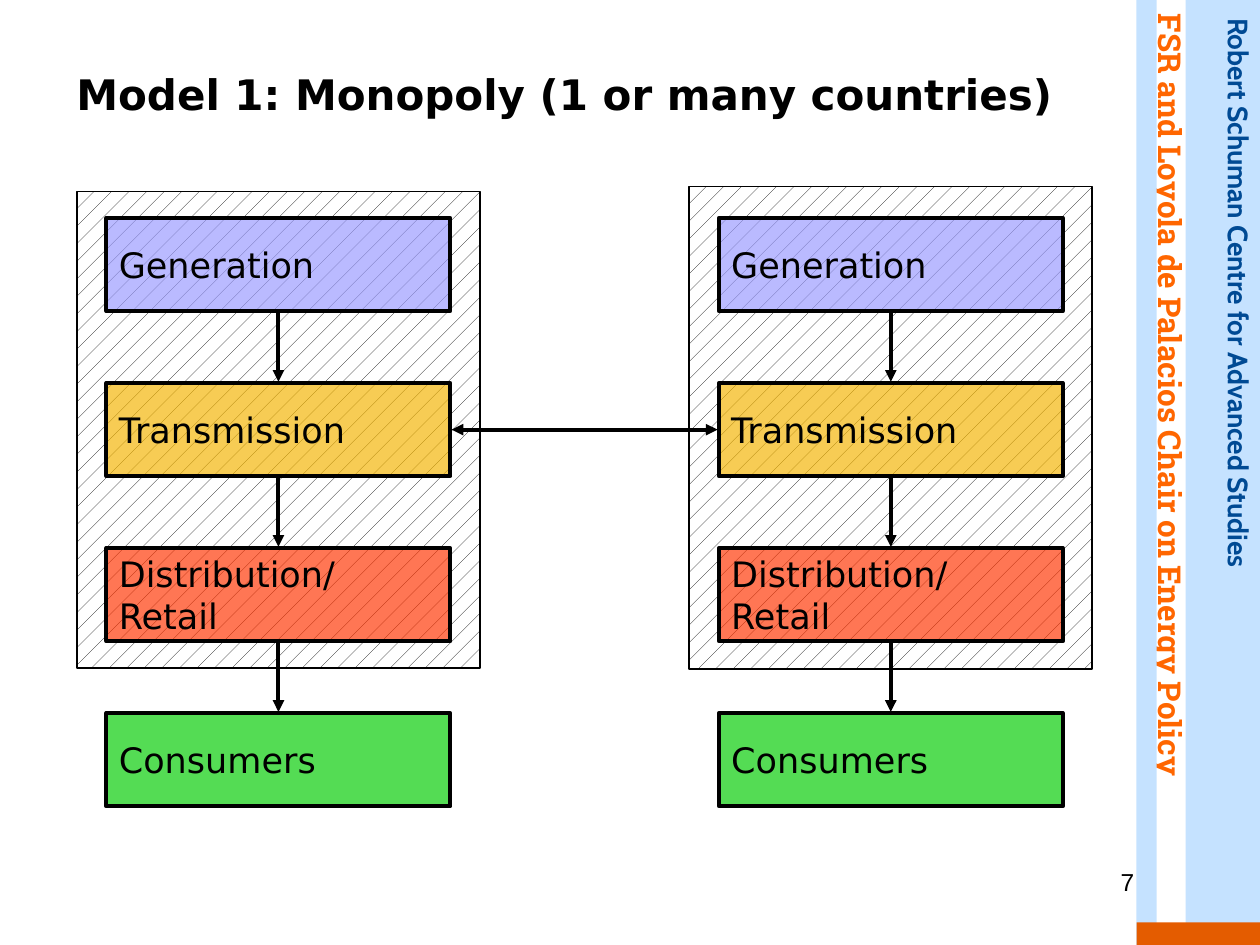
from lxml import etree
from pptx import Presentation
from pptx.dml.color import RGBColor
from pptx.enum.dml import MSO_PATTERN
from pptx.enum.shapes import MSO_CONNECTOR, MSO_SHAPE
from pptx.enum.text import MSO_ANCHOR, PP_ALIGN
from pptx.oxml.ns import qn
from pptx.util import Inches, Pt

RECTANGLE = MSO_SHAPE.RECTANGLE
STRAIGHT = MSO_CONNECTOR.STRAIGHT
HATCH = MSO_PATTERN.PERCENT_5
MIDDLE, TOP = MSO_ANCHOR.MIDDLE, MSO_ANCHOR.TOP
LEFT, CENTER, RIGHT = PP_ALIGN.LEFT, PP_ALIGN.CENTER, PP_ALIGN.RIGHT

BODY_FONT = "DejaVu Sans"
STAGES = [
    ("Generation", "9999FF"),
    ("Transmission", "F4B400"),
    ("Distribution/\nRetail", "FF3300"),
    ("Consumers", "00CC00"),
]
STAGE_TOP, STAGE_PITCH = Inches(1.73), Inches(1.31)
STAGE_WIDTH, STAGE_HEIGHT = Inches(2.73), Inches(0.74)
ARROW_GAP = Inches(0.01)


def rgb(value):
    return RGBColor.from_string(value)


def write(shape, text, size, font, color="000000", bold=False, align=LEFT, anchor=TOP):
    frame = shape.text_frame
    frame.word_wrap = True
    frame.vertical_anchor = anchor
    paragraph = frame.paragraphs[0]
    paragraph.alignment = align
    for index, line in enumerate(text.split("\n")):
        if index:
            paragraph.add_line_break()
        run = paragraph.add_run()
        run.text = line
        run.font.size = Pt(size)
        run.font.name = font
        run.font.bold = bold
        run.font.color.rgb = rgb(color)


def add_box(slide, box, fill=None, line_width=None, opacity=None):
    """Rectangle with a solid fill, or a hatched one when no fill is given."""
    rectangle = slide.shapes.add_shape(RECTANGLE, *box)
    rectangle.shadow.inherit = False
    if fill:
        rectangle.fill.solid()
        rectangle.fill.fore_color.rgb = rgb(fill)
    else:
        rectangle.fill.patterned()
        rectangle.fill.pattern = HATCH
        rectangle.fill.fore_color.rgb = rgb("000000")
        rectangle.fill.back_color.rgb = rgb("FFFFFF")
    if opacity:
        color = rectangle.fill._xPr.find(qn("a:solidFill"))[0]
        etree.SubElement(color, qn("a:alpha"), val=str(opacity * 1000))
    if line_width:
        rectangle.line.color.rgb = rgb("000000")
        rectangle.line.width = Pt(line_width)
    else:
        rectangle.line.fill.background()
    return rectangle


def add_arrow(slide, start, end, double=False):
    arrow = slide.shapes.add_connector(STRAIGHT, *start, *end)
    arrow.line.color.rgb = rgb("000000")
    arrow.line.width = Pt(2.25)
    line = arrow.line._get_or_add_ln()
    for tip in ("a:headEnd", "a:tailEnd") if double else ("a:tailEnd",):
        etree.SubElement(line, qn(tip), type="triangle")
    etree.SubElement(arrow._element.spPr, qn("a:effectLst"))


def add_sidebar(slide, left, width, height):
    """Coloured bars with the two institution names running downwards."""
    chair = add_box(slide, (Inches(5.69), Inches(3.41), Inches(7.2), Inches(0.4)), "FFFFFF")
    chair.rotation = 90
    write(chair, "FSR and Loyola de Palacios Chair on Energy Policy",
          18, "Roboto Slab", "FF6600", bold=True)
    wide_bar, narrow_bar, foot = Inches(0.59), Inches(0.16), Inches(0.18)
    add_box(slide, (left + width - wide_bar, 0, wide_bar, height), "C5E2FF")
    centre = slide.shapes.add_textbox(Inches(6.6), Inches(3.09), Inches(6.46), Inches(0.37))
    centre.rotation = 90
    write(centre, "Robert Schuman Centre for Advanced Studies",
          16, "Cabin", "004A94", bold=True)
    add_box(slide, (left, 0, narrow_bar, height), "C5E2FF")
    add_box(slide, (left, height - foot, width, foot), "E45C00")


def add_title(slide, left, top, width, height):
    title = slide.shapes.title
    title.left, title.top, title.width, title.height = left, top, width, height
    write(title, "Model 1: Monopoly (1 or many countries)", 24, BODY_FONT,
          bold=True, align=CENTER, anchor=MIDDLE)


def add_supply_chain(slide, left, top, width, height):
    """Hatched monopoly frame with the stages; returns the stages' left edge."""
    add_box(slide, (left, top, width, height), line_width=1)
    stage_left = left + (width - STAGE_WIDTH) // 2
    middle = stage_left + STAGE_WIDTH // 2
    tops = [STAGE_TOP + index * STAGE_PITCH for index in range(len(STAGES))]
    for (name, color), stage_top in zip(STAGES, tops):
        stage = add_box(slide, (stage_left, stage_top, STAGE_WIDTH, STAGE_HEIGHT),
                        color, line_width=2.25, opacity=67)
        write(stage, name, 20, BODY_FONT, anchor=MIDDLE)
    for upper, lower in zip(tops, tops[1:]):
        add_arrow(slide, (middle, upper + STAGE_HEIGHT + ARROW_GAP),
                  (middle, lower - ARROW_GAP))
    return stage_left


def add_page_number(slide, left, top, width, height):
    number = slide.shapes.add_textbox(left, top, width, height)
    write(number, "7", 14, "Arial", align=RIGHT)


def main():
    presentation = Presentation()
    presentation.slide_width, presentation.slide_height = Inches(10), Inches(7.5)
    slide = presentation.slides.add_slide(presentation.slide_layouts[5])
    add_sidebar(slide, Inches(9.02), Inches(0.98), presentation.slide_height)
    add_page_number(slide, Inches(7.17), Inches(6.83), Inches(1.93), Inches(0.52))
    add_title(slide, Inches(0.16), Inches(0.25), Inches(8.64), Inches(0.98))
    first = add_supply_chain(slide, Inches(0.61), Inches(1.52), Inches(3.2), Inches(3.78))
    second = add_supply_chain(slide, Inches(5.47), Inches(1.48), Inches(3.2), Inches(3.83))
    link_y = STAGE_TOP + STAGE_PITCH + STAGE_HEIGHT // 2
    add_arrow(slide, (first + STAGE_WIDTH + ARROW_GAP, link_y),
              (second - ARROW_GAP, link_y), double=True)
    presentation.save("out.pptx")


if __name__ == "__main__":
    main()
